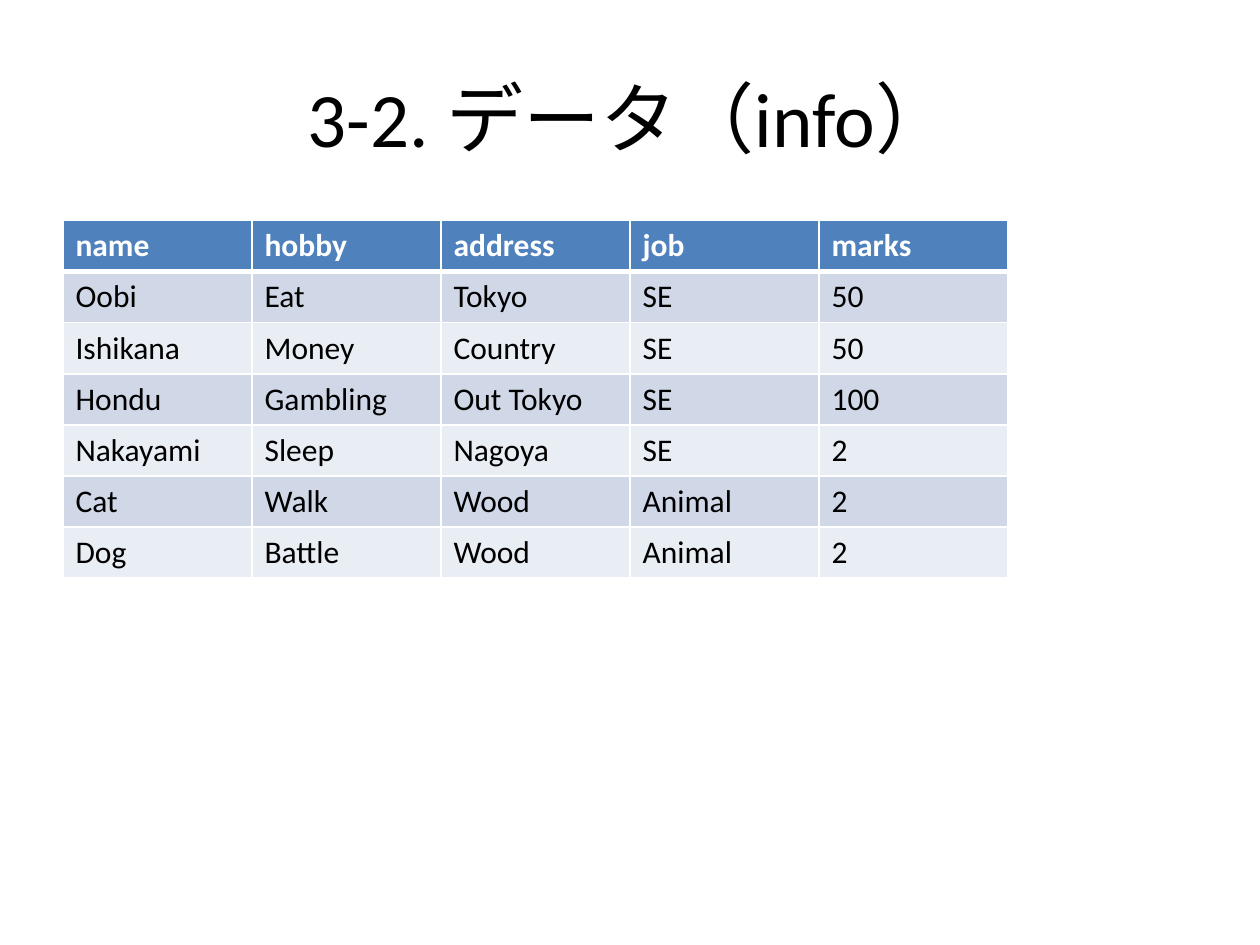
from lxml.etree import SubElement
from pptx import Presentation
from pptx.dml.color import RGBColor
from pptx.enum.text import MSO_ANCHOR, PP_ALIGN
from pptx.oxml.ns import qn
from pptx.util import Pt

COLORS = {"header": "4F81BD", "odd": "D0D8E8", "even": "E9EDF4",
          "white": "FFFFFF", "black": "000000"}
ROWS = [
    ["name", "hobby", "address", "job", "marks"],
    ["Oobi", "Eat", "Tokyo", "SE", "50"],
    ["Ishikana", "Money", "Country", "SE", "50"],
    ["Hondu", "Gambling", "Out Tokyo", "SE", "100"],
    ["Nakayami", "Sleep", "Nagoya", "SE", "2"],
    ["Cat", "Walk", "Wood", "Animal", "2"],
    ["Dog", "Battle", "Wood", "Animal", "2"],
]
COL_W, ROW_H = 108, 29.2


def add_run(p, text, color, **font):
    r = p.add_run()
    r.text = text
    for name, value in {"name": "Calibri", **font}.items():
        setattr(r.font, name, value)
    r.font.color.rgb = RGBColor.from_string(COLORS[color])


def set_borders(cell, widths):
    tcPr = cell._tc.get_or_add_tcPr()
    for side, width in widths.items():
        ln = SubElement(tcPr, qn(f"a:ln{side}"), w=str(Pt(width)))
        fill = SubElement(ln, qn("a:solidFill"))
        SubElement(fill, qn("a:srgbClr"), val=COLORS["white"])


prs = Presentation()
prs.slide_width, prs.slide_height = Pt(720), Pt(540)
s = prs.slides.add_slide(prs.slide_layouts[5])

# Title
sp = s.shapes.title
box = {"left": 36, "top": 21.6, "width": 648, "height": 90}
for name, value in box.items():
    setattr(sp, name, Pt(value))
tf = sp.text_frame
tf.vertical_anchor = MSO_ANCHOR.MIDDLE
p = tf.paragraphs[0]
p.alignment = PP_ALIGN.CENTER
add_run(p, "3-2. データ（info）", "black", size=Pt(44))

# Table
n_rows, n_cols = len(ROWS), len(ROWS[0])
table = s.shapes.add_table(n_rows, n_cols, Pt(36), Pt(126),
                           Pt(COL_W * n_cols), Pt(ROW_H * n_rows)).table
for col in table.columns:
    col.width = Pt(COL_W)
for i, row in enumerate(ROWS):
    table.rows[i].height = Pt(ROW_H)
    header = i == 0
    band = "header" if header else "odd" if i % 2 else "even"
    for j, text in enumerate(row):
        cell = table.cell(i, j)
        # The rule below the header is thicker than the others
        set_borders(cell, {"L": 1, "R": 1, "T": 3 if i == 1 else 1,
                           "B": 3 if header else 1})
        cell.fill.solid()
        cell.fill.fore_color.rgb = RGBColor.from_string(COLORS[band])
        add_run(cell.text_frame.paragraphs[0], text,
                "white" if header else "black", size=Pt(18), bold=header)

prs.save("out.pptx")
